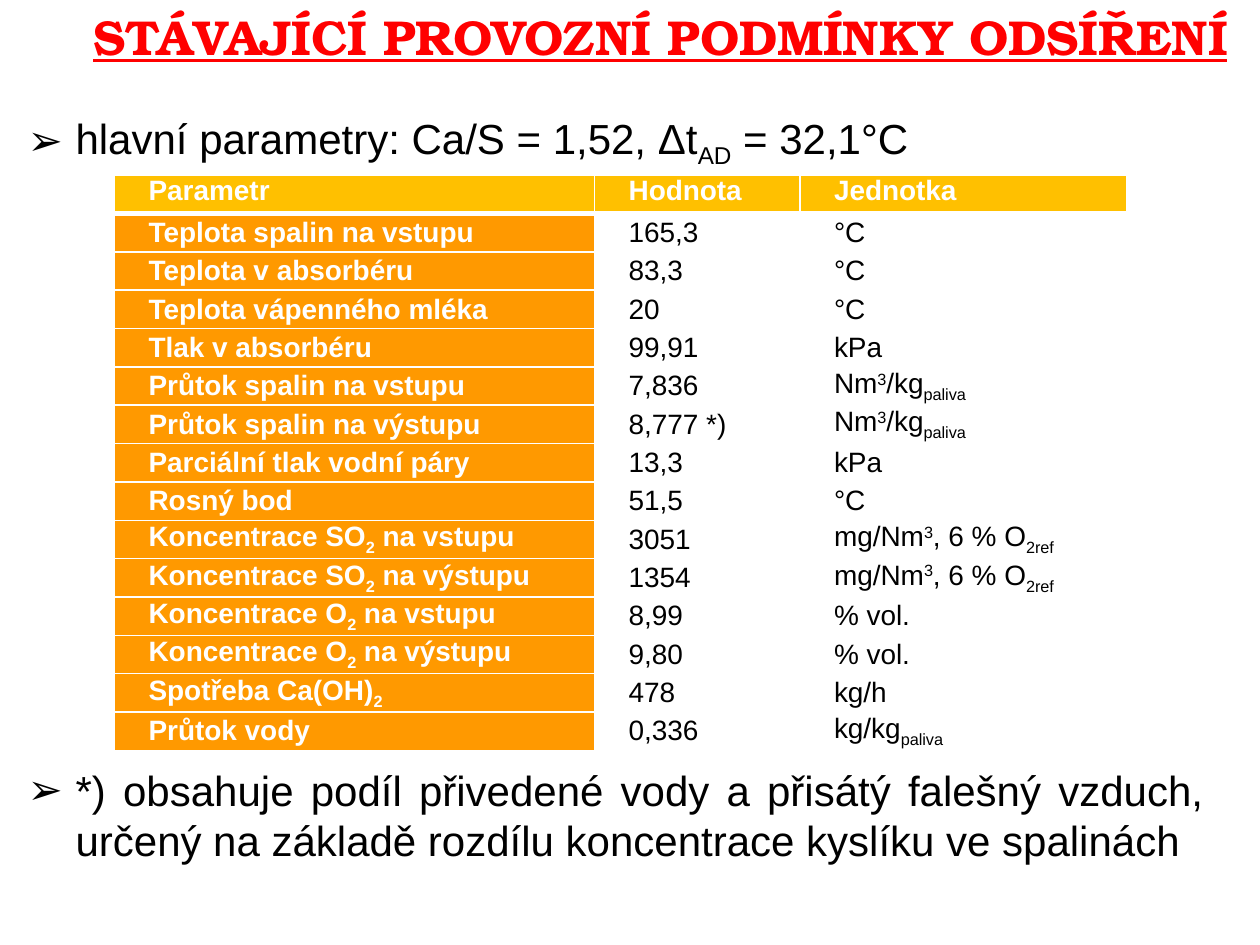
from lxml import etree
from pptx import Presentation, util as u
from pptx.dml.color import RGBColor
from pptx.enum import text
from pptx.oxml import ns

# The slide is a grid of 100 columns by 75 rows.
UNIT = u.Inches(0.1)
TITLE_BOX = (-0.1, 0, 100, 5.7)
BODY_BOX = (1.2, 8.4, 95.3, 63.6)
TABLE_BOX = (9.1, 13.9, 80.3, 45.7)
COLUMN_SHARES = (3.81, 1.63, 2.59)

WHITE, BLACK, RED = "FFFFFF", "000000", "FF0000"
HEADER_FILL, LABEL_FILL = "FFC000", "FF9900"
BASELINES = {"_": "-25000", "^": "30000"}

TITLE = "STÁVAJÍCÍ PROVOZNÍ PODMÍNKY ODSÍŘENÍ"
BULLETS = [
    "hlavní parametry: Ca/S = 1,52, Δt|_AD| = 32,1°C",
    "*) obsahuje podíl přivedené vody a přisátý falešný vzduch, "
    "určený na základě rozdílu koncentrace kyslíku ve spalinách",
]
ROWS = [
    ("Parametr", "Hodnota", "Jednotka"),
    ("Teplota spalin na vstupu", "165,3", "°C"),
    ("Teplota v absorbéru", "83,3", "°C"),
    ("Teplota vápenného mléka", "20", "°C"),
    ("Tlak v absorbéru", "99,91", "kPa"),
    ("Průtok spalin na vstupu", "7,836", "Nm|^3|/kg|_paliva"),
    ("Průtok spalin na výstupu", "8,777 *)", "Nm|^3|/kg|_paliva"),
    ("Parciální tlak vodní páry", "13,3", "kPa"),
    ("Rosný bod", "51,5", "°C"),
    ("Koncentrace SO|_2| na vstupu", "3051", "mg/Nm|^3|, 6 % O|_2ref"),
    ("Koncentrace SO|_2| na výstupu", "1354", "mg/Nm|^3|, 6 % O|_2ref"),
    ("Koncentrace O|_2| na vstupu", "8,99", "% vol."),
    ("Koncentrace O|_2| na výstupu", "9,80", "% vol."),
    ("Spotřeba Ca(OH)|_2", "478", "kg/h"),
    ("Průtok vody", "0,336", "kg/kg|_paliva"),
]


def color(value):
    return RGBColor.from_string(value)


def on_grid(box):
    return [round(n * UNIT) for n in box]


def place(sp, box):
    sp.left, sp.top, sp.width, sp.height = on_grid(box)
    tf = sp.text_frame
    tf.word_wrap = True
    tf.auto_size = text.MSO_AUTO_SIZE.NONE
    tf.vertical_anchor = text.MSO_ANCHOR.TOP
    return tf


def indent(p, left, first):
    pPr = p._p.get_or_add_pPr()
    pPr.set("marL", str(u.Inches(left)))
    pPr.set("indent", str(u.Inches(first)))
    return pPr


def write(p, marked, size, fill, bold=False, font="Arial"):
    """Write text whose parts are split by |, with _ for subscript and ^ for superscript."""
    for part in marked.split("|"):
        r = p.add_run()
        r.text = part.lstrip("_^")
        r.font.name, r.font.size, r.font.bold = font, u.Pt(size), bold
        r.font.color.rgb = color(fill)
        if part[0] in BASELINES:
            r.font._element.set("baseline", BASELINES[part[0]])


def add_title(s, box):
    p = place(s.shapes.title, box).paragraphs[0]
    p.alignment = text.PP_ALIGN.CENTER
    indent(p, 0.5, 0)
    write(p, TITLE, 28, RED, True, "TeX Gyre Bonum")
    p.runs[0].font.underline = True


def add_bullets(s, box):
    tf = place(s.placeholders[1], box)
    for i, line in enumerate(BULLETS):
        p = tf.add_paragraph() if i else tf.paragraphs[0]
        pPr = indent(p, 0.38, -0.38)
        etree.SubElement(pPr, ns.qn("a:buChar")).set("char", "➢")
        p.alignment = text.PP_ALIGN.JUSTIFY
        # The second bullet stands below the table.
        p.space_before = u.Pt(340 if i else 0)
        write(p, line, 24, BLACK)


def set_borders(cell, **widths):
    tcPr = cell._tc.get_or_add_tcPr()
    for side in "LRTB":
        ln = etree.SubElement(tcPr, ns.qn(f"a:ln{side}"))
        ln.set("w", str(u.Pt(widths.get(side, 1))))
        solid = etree.SubElement(ln, ns.qn("a:solidFill"))
        etree.SubElement(solid, ns.qn("a:srgbClr")).set("val", WHITE)


def fill_cell(cell, value, row, col):
    header, strong = row == 0, row == 0 or col == 0
    set_borders(cell, T=3 if row == 1 else 1, B=3 if header else 1)
    cell.fill.solid()
    cell.fill.fore_color.rgb = color(
        HEADER_FILL if header else LABEL_FILL if strong else WHITE)
    cell.margin_left = cell.margin_right = u.Inches(0.07)
    cell.margin_top = cell.margin_bottom = 0
    cell.vertical_anchor = text.MSO_ANCHOR.TOP if header else text.MSO_ANCHOR.MIDDLE
    p = cell.text_frame.paragraphs[0]
    p.alignment = text.PP_ALIGN.JUSTIFY
    indent(p, 0, 0.2)
    write(p, value, 16, WHITE if strong else BLACK, strong)


def add_parameters(s, box):
    left, top, width, height = on_grid(box)
    table = s.shapes.add_table(
        len(ROWS), len(COLUMN_SHARES), left, top, width, height).table
    for column, share in zip(table.columns, COLUMN_SHARES):
        column.width = round(width * share / sum(COLUMN_SHARES))
    for i, values in enumerate(ROWS):
        table.rows[i].height = height // len(ROWS)
        for j, value in enumerate(values):
            fill_cell(table.cell(i, j), value, i, j)


def main():
    prs = Presentation()
    prs.slide_width, prs.slide_height = 100 * UNIT, 75 * UNIT
    s = prs.slides.add_slide(prs.slide_layouts[1])
    add_title(s, TITLE_BOX)
    add_bullets(s, BODY_BOX)
    add_parameters(s, TABLE_BOX)
    prs.save("out.pptx")


if __name__ == "__main__":
    main()
